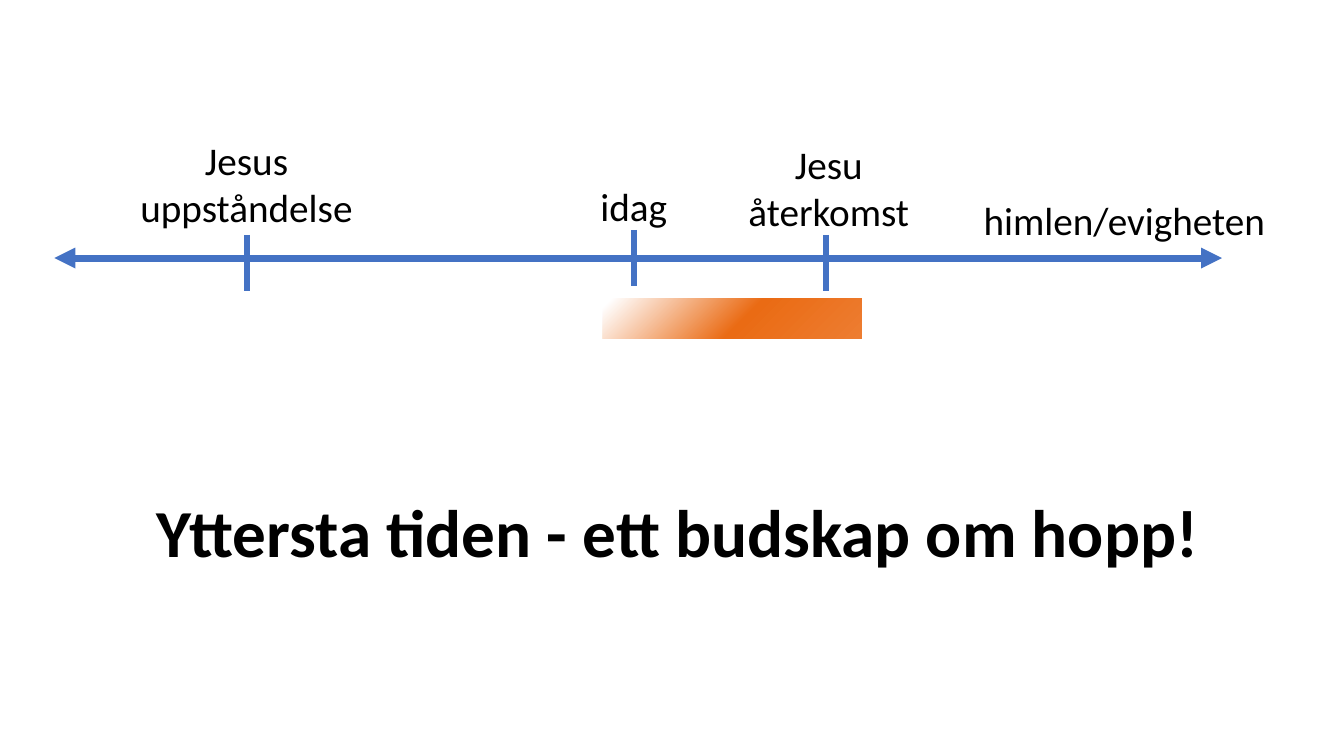
from dataclasses import dataclass
from typing import Any

from lxml.etree import SubElement
from pptx import Presentation
from pptx.dml.color import RGBColor
from pptx.enum.shapes import MSO_CONNECTOR as Connector, MSO_SHAPE as Shape
from pptx.enum.text import MSO_ANCHOR as Anchor, PP_ALIGN as Align
from pptx.oxml import parse_xml
from pptx.oxml.ns import nsdecls, qn
from pptx.util import Inches, Pt

BLACK = RGBColor(0x00, 0x00, 0x00)
BLUE = RGBColor(0x44, 0x72, 0xC4)
ORANGE = RGBColor(0xED, 0x7D, 0x31)
DEEP_ORANGE = RGBColor(0xEA, 0x6B, 0x14)
WHITE = RGBColor(0xFF, 0xFF, 0xFF)

AXIS_Y = 2.56
TICK_HEIGHT = 0.56
LABEL_FONT = {"name": "Calibri", "size": Pt(28)}
MESSAGE_FONT = {"name": "Calibri", "size": Pt(48), "bold": True}
LABEL_PARAGRAPH = {"alignment": Align.CENTER}
MESSAGE_PARAGRAPH = {"alignment": Align.CENTER, "line_spacing": 0.9, "space_before": Pt(10)}


@dataclass(frozen=True)
class Label:
    lines: tuple[str, ...]
    left: float
    top: float
    width: float
    height: float
    wrap: bool = False


@dataclass(frozen=True)
class Tick:
    x: float
    top: float


LABELS = (
    Label(("Jesus", "uppståndelse"), 1.28, 1.3, 2.33, 1.04),
    Label(("idag",), 5.85, 1.76, 0.87, 0.57),
    Label(("Jesu återkomst",), 7.26, 1.34, 1.92, 1.04, wrap=True),
    Label(("himlen/evigheten",), 9.64, 1.9, 3.02, 0.57),
)
TICKS = (Tick(2.45, 2.33), Tick(6.29, 2.28), Tick(8.19, 2.33))
MESSAGE = Label(("Yttersta tiden - ett budskap om hopp!",), 0.5, 3.97, 12.44, 2.68, wrap=True)
FADE_STOPS = ((0, ORANGE), (46, DEEP_ORANGE), (97, WHITE))


def set_attributes(target: Any, values: dict[str, Any]) -> None:
    for name, value in values.items():
        setattr(target, name, value)


def add_label(slide: Any, label: Label, font: dict[str, Any],
              paragraph_format: dict[str, Any], anchor: Anchor = Anchor.TOP) -> None:
    box = slide.shapes.add_textbox(
        Inches(label.left), Inches(label.top), Inches(label.width), Inches(label.height))
    frame = box.text_frame
    set_attributes(frame, {"word_wrap": label.wrap, "vertical_anchor": anchor})
    frame.text = "\n".join(label.lines)
    for paragraph in frame.paragraphs:
        set_attributes(paragraph, paragraph_format)
        for run in paragraph.runs:
            set_attributes(run.font, font)
            run.font.color.rgb = BLACK


def add_line(slide: Any, start: tuple[float, float], end: tuple[float, float],
             weight: float, arrows: bool = False) -> None:
    connector = slide.shapes.add_connector(
        Connector.STRAIGHT, *(Inches(value) for value in start + end))
    connector.line.width = Pt(weight)
    connector.line.color.rgb = BLUE
    if arrows:
        outline = connector.line._get_or_add_ln()
        for tip in ("a:headEnd", "a:tailEnd"):
            SubElement(outline, qn(tip), type="triangle")
    SubElement(connector._element.spPr, qn("a:effectLst"))


def add_end_times_bar(slide: Any) -> None:
    bar = slide.shapes.add_shape(
        Shape.RECTANGLE, Inches(5.98), Inches(2.96), Inches(2.57), Inches(0.4))
    bar.shadow.inherit = False
    bar.line.fill.background()
    stops = "".join(
        f'<a:gs pos="{percent * 1000}"><a:srgbClr val="{color}"/></a:gs>'
        for percent, color in FADE_STOPS)
    gradient = parse_xml(
        f'<a:gradFill {nsdecls("a")} rotWithShape="1"><a:gsLst>{stops}</a:gsLst>'
        '<a:path path="circle"><a:fillToRect l="100000" t="100000"/></a:path></a:gradFill>')
    bar._element.spPr.find(qn("a:prstGeom")).addnext(gradient)


def main() -> None:
    presentation = Presentation()
    set_attributes(presentation, {"slide_width": Inches(13.33), "slide_height": Inches(7.5)})
    slide = presentation.slides.add_slide(presentation.slide_layouts[6])

    add_label(slide, MESSAGE, MESSAGE_FONT, MESSAGE_PARAGRAPH, Anchor.MIDDLE)
    add_line(slide, (0.54, AXIS_Y), (12.12, AXIS_Y), 5, arrows=True)
    for tick in TICKS:
        add_line(slide, (tick.x, tick.top), (tick.x, tick.top + TICK_HEIGHT), 4)
    for label in LABELS:
        add_label(slide, label, LABEL_FONT, LABEL_PARAGRAPH)
    add_end_times_bar(slide)

    presentation.save("out.pptx")


if __name__ == "__main__":
    main()
